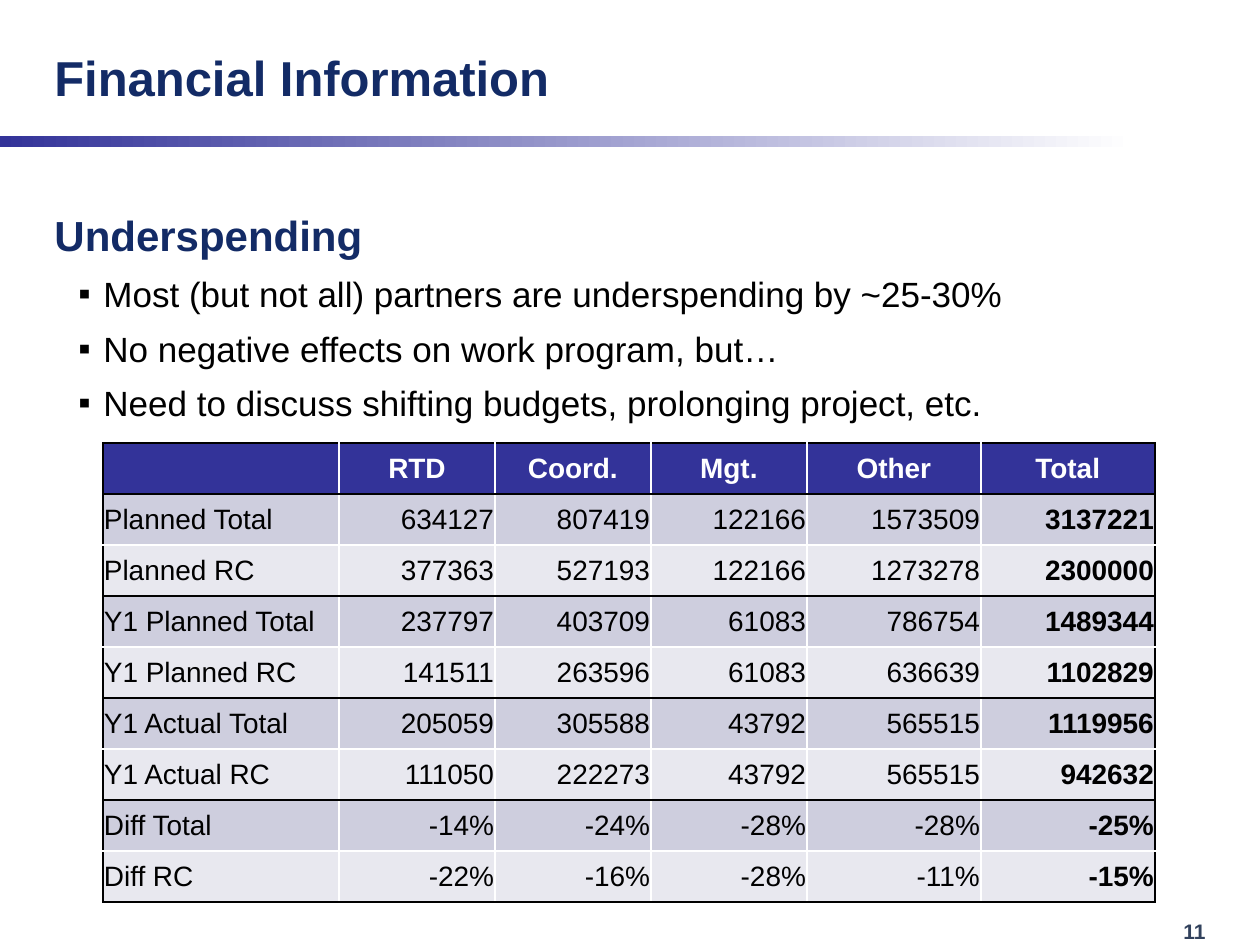
import dataclasses
import typing

import pptx
import pptx.dml.color
import pptx.enum.shapes
import pptx.enum.text
import pptx.oxml
import pptx.oxml.ns
import pptx.util

RGB = pptx.dml.color.RGBColor
ALIGN = pptx.enum.text.PP_ALIGN
ANCHOR = pptx.enum.text.MSO_ANCHOR
NAVY = RGB(0x13, 0x2B, 0x66)
SLATE = RGB(0x32, 0x42, 0x5D)
INDIGO = RGB(0x33, 0x33, 0x99)
LAVENDER = RGB(0xCE, 0xCE, 0xDE)
PALE = RGB(0xE8, 0xE8, 0xEF)
BLACK = RGB(0, 0, 0)
WHITE = RGB(0xFF, 0xFF, 0xFF)
FONT = "Arial"
PX_PER_INCH = 126


def px(length: int) -> pptx.util.Emu:
    return pptx.util.Emu(round(length * 914400 / PX_PER_INCH))


@dataclasses.dataclass(frozen=True)
class Line:
    text: str
    size: int
    color: RGB
    bold: bool = True
    bullet: str = ""


@dataclasses.dataclass(frozen=True)
class TextBlock:
    left: int
    top: int
    width: int
    height: int
    lines: tuple[Line, ...]
    anchor: typing.Any = ANCHOR.TOP
    line_spacing: float = 1.0


POINTS = (
    "Most (but not all) partners are underspending by ~25-30%",
    "No negative effects on work program, but…",
    "Need to discuss shifting budgets, prolonging project, etc.",
)
BLOCKS = (
    TextBlock(1171, 912, 81, 38, (Line("11", 12, SLATE),)),
    TextBlock(42, 14, 892, 126, (Line("Financial Information", 28, NAVY),), ANCHOR.MIDDLE),
    TextBlock(
        42, 201, 1176, 703,
        (Line("Underspending", 24, NAVY), *(Line(point, 20, BLACK, False, "▪") for point in POINTS)),
        line_spacing=1.05,
    ),
)
BUDGET = (
    ("", "RTD", "Coord.", "Mgt.", "Other", "Total"),
    ("Planned Total", "634127", "807419", "122166", "1573509", "3137221"),
    ("Planned RC", "377363", "527193", "122166", "1273278", "2300000"),
    ("Y1 Planned Total", "237797", "403709", "61083", "786754", "1489344"),
    ("Y1 Planned RC", "141511", "263596", "61083", "636639", "1102829"),
    ("Y1 Actual Total", "205059", "305588", "43792", "565515", "1119956"),
    ("Y1 Actual RC", "111050", "222273", "43792", "565515", "942632"),
    ("Diff Total", "-14%", "-24%", "-28%", "-28%", "-25%"),
    ("Diff RC", "-22%", "-16%", "-28%", "-11%", "-15%"),
)
COLUMN_WIDTHS = (236, 156, 156, 156, 174, 174)
ROW_HEIGHT = 51
LAST_COLUMN = len(COLUMN_WIDTHS) - 1


def apply(target: typing.Any, values: dict[str, typing.Any]) -> None:
    for name, value in values.items():
        setattr(target, name, value)


def style_font(font: typing.Any, size: int, color: RGB, bold: bool) -> None:
    apply(font, {"name": FONT, "size": pptx.util.Pt(size), "bold": bold})
    font.color.rgb = color


def add_bullet(paragraph: typing.Any, mark: str) -> None:
    properties = paragraph._p.get_or_add_pPr()
    properties.set("marL", str(px(49)))
    properties.set("indent", str(-px(25)))
    namespace = pptx.oxml.ns.nsdecls("a")
    properties.append(pptx.oxml.parse_xml(f'<a:buFont {namespace} typeface="{FONT}"/>'))
    properties.append(pptx.oxml.parse_xml(f'<a:buChar {namespace} char="{mark}"/>'))


def draw_block(slide: typing.Any, block: TextBlock) -> None:
    box = slide.shapes.add_textbox(px(block.left), px(block.top), px(block.width), px(block.height))
    frame = box.text_frame
    apply(frame, {"word_wrap": True, "vertical_anchor": block.anchor})
    for index, line in enumerate(block.lines):
        paragraph = frame.add_paragraph() if index else frame.paragraphs[0]
        paragraph.text = line.text
        paragraph.line_spacing = block.line_spacing
        if index:
            paragraph.space_before = pptx.util.Pt(6)
        if line.bullet:
            add_bullet(paragraph, line.bullet)
        style_font(paragraph.font, line.size, line.color, line.bold)


def draw_title_band(slide: typing.Any) -> None:
    band = slide.shapes.add_shape(
        pptx.enum.shapes.MSO_SHAPE.RECTANGLE, 0, px(136), px(1260), px(11)
    )
    band.shadow.inherit = False
    band.line.fill.background()
    band.fill.gradient()
    band.fill.gradient_angle = 0
    for stop, color, position in zip(band.fill.gradient_stops, (INDIGO, WHITE), (0, 0.9)):
        stop.color.rgb = color
        stop.position = position


def set_borders(cell: typing.Any, colors: dict[str, RGB]) -> None:
    properties = cell._tc.get_or_add_tcPr()
    for index, (side, color) in enumerate(colors.items()):
        properties.insert(index, pptx.oxml.parse_xml(
            f'<a:ln{side} {pptx.oxml.ns.nsdecls("a")} w="12700"><a:solidFill>'
            f'<a:srgbClr val="{color}"/></a:solidFill></a:ln{side}>'
        ))


def fill_cell(cell: typing.Any, row: int, column: int, text: str) -> None:
    """Black rules frame the table and each Total/RC pair of rows."""
    header, pair_start = row == 0, row % 2 == 1
    apply(cell, {
        "text": text,
        "vertical_anchor": ANCHOR.MIDDLE,
        "margin_left": px(1), "margin_right": px(1),
        "margin_top": px(1), "margin_bottom": 0,
    })
    paragraph = cell.text_frame.paragraphs[0]
    paragraph.alignment = ALIGN.CENTER if header else ALIGN.RIGHT if column else ALIGN.LEFT
    style_font(paragraph.font, 16, WHITE if header else BLACK, header or column == LAST_COLUMN)
    cell.fill.solid()
    cell.fill.fore_color.rgb = INDIGO if header else LAVENDER if pair_start else PALE
    set_borders(cell, {
        "L": WHITE if column else BLACK,
        "R": BLACK if column == LAST_COLUMN else WHITE,
        "T": BLACK if header or pair_start else WHITE,
        "B": WHITE if pair_start else BLACK,
    })


def draw_budget(slide: typing.Any) -> None:
    table = slide.shapes.add_table(
        len(BUDGET), len(COLUMN_WIDTHS), px(103), px(443),
        px(sum(COLUMN_WIDTHS)), px(ROW_HEIGHT * len(BUDGET)),
    ).table
    for column, width in zip(table.columns, COLUMN_WIDTHS):
        column.width = px(width)
    for row, values in enumerate(BUDGET):
        table.rows[row].height = px(ROW_HEIGHT)
        for column, text in enumerate(values):
            fill_cell(table.cell(row, column), row, column, text)


def main() -> None:
    deck = pptx.Presentation()
    apply(deck, {"slide_width": px(1260), "slide_height": px(945)})
    slide = deck.slides.add_slide(deck.slide_layouts[6])
    draw_title_band(slide)
    for block in BLOCKS:
        draw_block(slide, block)
    draw_budget(slide)
    deck.save("out.pptx")


if __name__ == "__main__":
    main()
